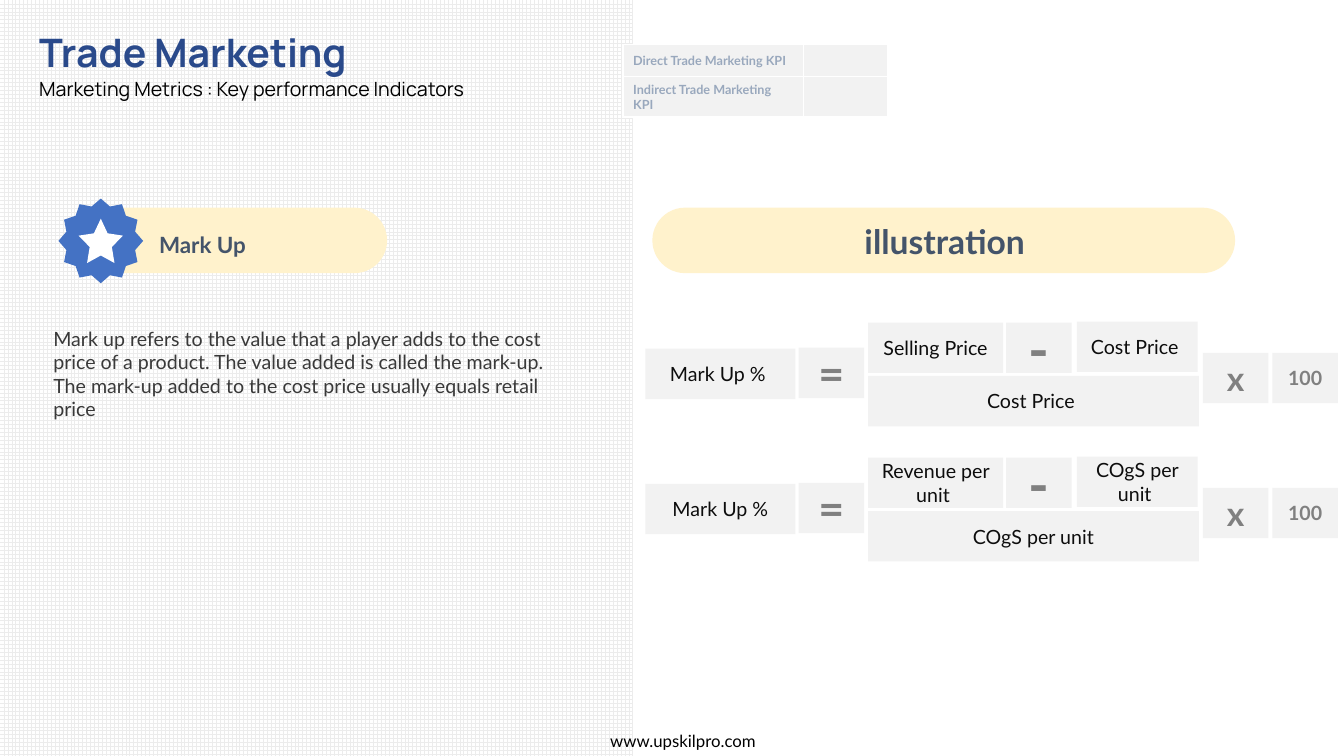
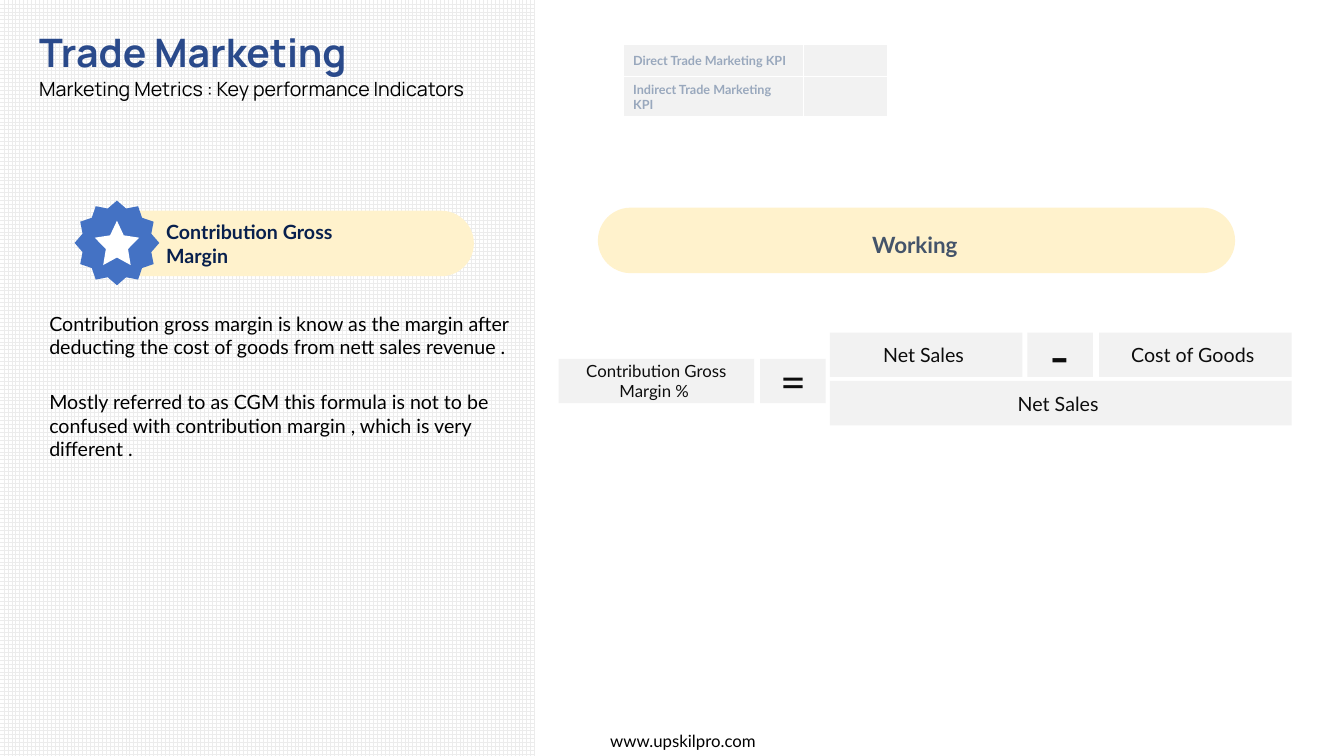
from lxml.etree import SubElement
from pptx import Presentation
from pptx.dml.color import RGBColor
from pptx.enum.dml import MSO_PATTERN as Pat
from pptx.enum.shapes import MSO_SHAPE as Shp
from pptx.enum.text import MSO_ANCHOR as Anc, PP_ALIGN as Al
from pptx.oxml.ns import qn
from pptx.util import Inches, Pt

WHITE = RGBColor(0xFF, 0xFF, 0xFF)
GRID = RGBColor(0xEC, 0xEC, 0xEC)
CREAM = RGBColor(0xFF, 0xF2, 0xCC)
BLUE = RGBColor(0x44, 0x72, 0xC4)
TITLE = RGBColor(0x2A, 0x4A, 0x8B)
SLATE = RGBColor(0x44, 0x54, 0x6A)
NAVY = RGBColor(0x08, 0x20, 0x4D)
MIST = RGBColor(0x99, 0xA8, 0xBD)
PALE = RGBColor(0xF2, 0xF2, 0xF2)
GRAY = RGBColor(0x80, 0x80, 0x80)
INK = RGBColor(0x0D, 0x0D, 0x0D)
DARK = RGBColor(0x39, 0x39, 0x39)
BLACK = RGBColor(0, 0, 0)

# Operator sizes in the formulas
SIGNS = {"=": 32, "-": 40, "x": 24, "100": 14}

# Formula tiles: text, left, top, width, text size
marks = []
for top, name, gain, cost, base in [
    (3.2, "Mark Up % ", "Selling Price", "Cost Price ", "Cost Price "),
    (4.54, "Mark Up %", "Revenue per unit ", "COgS per unit ", "COgS per unit"),
]:
    marks += [
        (name, 6.4, top + 0.26, 1.49, 14),
        ("=", 7.92, top + 0.25, 0.65, 0),
        (gain, 8.61, top, 1.34, 14),
        ("-", 9.98, top, 0.65, 0),
        (cost, 10.68, top - 0.01, 1.2, 14),
        (base, 8.61, top + 0.53, 3.28, 14),
        ("x", 11.93, top + 0.3, 0.65, 0),
        ("100", 12.62, top + 0.3, 0.65, 0),
    ]
margin = [
    ("Contribution Gross Margin % ", 5.54, 3.56, 1.94, 12),
    ("=", 7.54, 3.56, 0.65, 0),
    ("Net Sales ", 8.23, 3.3, 1.91, 14),
    ("-", 10.19, 3.3, 0.65, 0),
    ("Cost of Goods ", 10.9, 3.3, 1.91, 14),
    ("Net Sales ", 8.23, 3.78, 4.58, 14),
]

# Boxes are left, top, width, height
pages = [
    dict(
        panel=6.28,
        body=["Mark up refers to the value that a player adds to the cost price "
              "of a product. The value added is called the mark-up. The mark-up "
              "added to the cost price usually equals retail price"],
        place=(0.43, 3.19, 5.25, 1.04), tone=DARK,
        pill=(0.78, 2.06, 3.06, 0.65), star=(0.58, 1.97),
        term="Mark Up", spot=(1.48, 2.24, 2.16, 0.37), size=16, hue=SLATE,
        band=(6.47, 2.06, 5.78, 0.65),
        head="illustration", over=(6.71, 2.14, 5.32, 0.5), big=24,
        tiles=marks, high=0.5, sign=GRAY, bold=True,
    ),
    dict(
        panel=5.31,
        body=["Contribution gross margin is know as the margin after deducting "
              "the cost of goods from nett sales revenue .",
              "Mostly referred to as CGM this formula is not to be confused with "
              "contribution margin , which is very different ."],
        place=(0.39, 3.04, 4.99, 1.61), tone=BLACK,
        pill=(0.88, 2.09, 3.82, 0.65), star=(0.74, 1.99),
        term="Contribution Gross Margin", spot=(1.55, 2.25, 2.48, 0.34),
        size=14, hue=NAVY,
        band=(5.93, 2.06, 6.32, 0.65),
        head="Working ", over=(6.19, 2.24, 5.82, 0.37), big=16,
        tiles=margin, high=0.44, sign=INK, bold=False,
    ),
]


def draw(slide, kind, box, color, adj=None):
    shape = slide.shapes.add_shape(kind, *map(Inches, box))
    shape.shadow.inherit = False
    shape.line.fill.background()
    shape.fill.solid()
    shape.fill.fore_color.rgb = color
    if adj is not None:
        shape.adjustments[0] = adj
    return shape


def write(shape, lines, size, color, bold=False, align=Al.LEFT, anchor=Anc.TOP,
          face="Lato"):
    frame = shape.text_frame
    frame.word_wrap = True
    frame.vertical_anchor = anchor
    frame.text = "\n".join(lines)
    for para in frame.paragraphs:
        para.alignment = align
        for run in para.runs:
            font = run.font
            font.name, font.size, font.bold = face, Pt(size), bold
            font.color.rgb = color
    return frame.paragraphs


prs = Presentation()
prs.slide_width, prs.slide_height = Inches(13.33), Inches(7.5)

for page in pages:
    slide = prs.slides.add_slide(prs.slide_layouts[6])
    add = slide.shapes.add_textbox

    # Grid panel
    panel = draw(slide, Shp.RECTANGLE, (0, 0, page["panel"], 7.5), WHITE)
    panel.fill.patterned()
    panel.fill.pattern = Pat.LARGE_GRID
    panel.fill.fore_color.rgb = GRID
    panel.fill.back_color.rgb = WHITE

    # Definition
    paras = write(add(*map(Inches, page["place"])), page["body"], 14, page["tone"])
    for para in paras[1:]:
        para.space_before = Pt(22.5)

    # Term with star badge
    left, top = page["star"]
    draw(slide, Shp.ROUNDED_RECTANGLE, page["pill"], CREAM, 0.5)
    draw(slide, Shp.STAR_12_POINT, (left, top, 0.84, 0.84), BLUE, 0.42)
    draw(slide, Shp.STAR_5_POINT, (left + 0.2, top + 0.2, 0.44, 0.44), WHITE, 0.25)
    write(add(*map(Inches, page["spot"])), [page["term"]], page["size"],
          page["hue"], True, anchor=Anc.MIDDLE)

    # Formula heading
    draw(slide, Shp.ROUNDED_RECTANGLE, page["band"], CREAM, 0.5)
    write(add(*map(Inches, page["over"])), [page["head"]], page["big"], SLATE,
          True, Al.CENTER, Anc.BOTTOM)

    # Formula
    for text, left, top, width, size in page["tiles"]:
        tile = draw(slide, Shp.RECTANGLE, (left, top, width, page["high"]), PALE)
        sign = text in SIGNS
        write(tile, [text], SIGNS.get(text, size), page["sign"] if sign else INK,
              sign and page["bold"], Al.CENTER, Anc.MIDDLE)

    # Title and subtitle
    title = add(*map(Inches, (0.29, 0.23, 8.7, 0.82)))
    paras = write(title, ["Trade Marketing",
                          "Marketing Metrics : Key performance Indicators"],
                  28, TITLE, True, face="Manrope")
    paras[1].line_spacing = 1.07
    paras[1].space_after = Pt(8)
    font = paras[1].runs[0].font
    font.size, font.bold = Pt(14), False
    font.color.rgb = BLACK

    # Footer
    write(add(*map(Inches, (5.4, 7.2, 2.75, 0.3))), ["www.upskilpro.com"], 12,
          BLACK, align=Al.CENTER)

    # KPI table
    box = map(Inches, (6.18, 0.44, 2.62, 0.64))
    table = slide.shapes.add_table(2, 2, *box).table
    table.first_row = table.horz_banding = False
    table.columns[0].width, table.columns[1].width = Inches(1.79), Inches(0.83)
    names = ["Direct Trade Marketing KPI", "", "Indirect Trade Marketing KPI", ""]
    for cell, name in zip(table.iter_cells(), names):
        paras = write(cell, [name], 9, MIST, True)
        cell.vertical_anchor = Anc.MIDDLE
        if not name:
            SubElement(paras[0]._p, qn("a:endParaRPr"), sz="900")
        props = cell._tc.get_or_add_tcPr()
        for side in "LRTB":
            edge = SubElement(props, qn("a:ln" + side), w=str(Pt(1)))
            SubElement(SubElement(edge, qn("a:solidFill")), qn("a:srgbClr"),
                       val=str(WHITE))
        cell.fill.solid()
        cell.fill.fore_color.rgb = PALE

prs.save("out.pptx")
